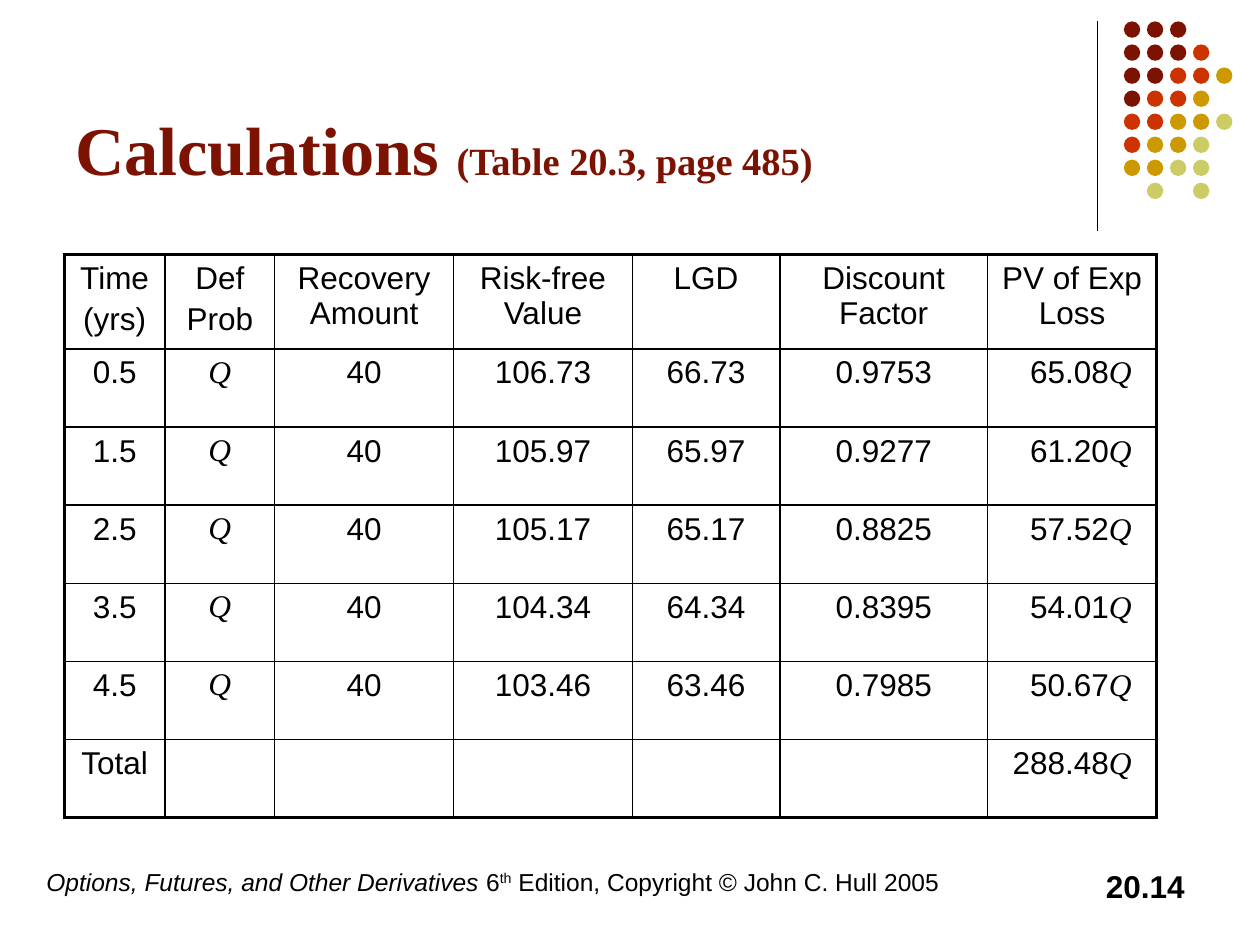
from dataclasses import dataclass

from lxml.etree import SubElement
from pptx import Presentation
from pptx.dml.color import RGBColor
from pptx.enum.shapes import MSO_CONNECTOR, MSO_SHAPE
from pptx.enum.text import MSO_ANCHOR, PP_ALIGN
from pptx.oxml import parse_xml
from pptx.oxml.ns import nsdecls, qn
from pptx.util import Inches, Pt


@dataclass(frozen=True)
class Theme:
    ink: str = "000000"
    maroon: str = "7C1302"
    red: str = "CC3300"
    gold: str = "CC9900"
    lime: str = "CCCC66"
    sans: str = "Arial"
    serif: str = "Times New Roman"
    title: float = 39
    subtitle: float = 22
    body: float = 18
    footer: float = 14
    outer_line: float = 2.25
    inner_line: float = 1
    rule_line: float = 0.75


T = Theme()

# A text is a list of paragraphs; a paragraph is a list of (words, format) runs.
TITLE = [[("Calculations ", {}), ("(Table 20.3, page 485)", {"size": T.subtitle})]]
FOOTER = [[
    ("Options, Futures, and Other Derivatives", {"italic": True}),
    (" 6", {}),
    ("th", {"raised": 30}),
    (" Edition, Copyright © John C. Hull 2005", {}),
]]
PAGE = [[("20.14", {})]]

HEADERS = [["Time", "(yrs)"], ["Def", "Prob"], ["Recovery Amount"], ["Risk-free Value"],
           ["LGD"], ["Discount Factor"], ["PV of Exp Loss"]]
RECOVERY = "40"
# time, risk-free value, loss given default, discount factor, PV of expected loss
DEFAULTS = [
    ("0.5", "106.73", "66.73", "0.9753", "65.08"),
    ("1.5", "105.97", "65.97", "0.9277", "61.20"),
    ("2.5", "105.17", "65.17", "0.8825", "57.52"),
    ("3.5", "104.34", "64.34", "0.8395", "54.01"),
    ("4.5", "103.46", "63.46", "0.7985", "50.67"),
]
TOTAL = "288.48"

DOTS = ["MMM", "MMMR", "MMRRG", "MRRG", "RRGGL", "RGGL", "GGLL", " L L"]
DOT_COLOURS = {"M": T.maroon, "R": T.red, "G": T.gold, "L": T.lime}
DOT_LEFT, DOT_TOP, DOT_SIZE = 8.92, 0.17, 0.13
DOT_PITCH = 1.28 / (len(DOTS) - 1)

TABLE_LEFT, TABLE_TOP = 0.51, 2.02
COLUMNS = [0.8, 0.87, 1.42, 1.42, 1.17, 1.65, 1.34]
ROWS = [0.69] + [0.62] * (len(DEFAULTS) + 1)
PV_INDENT = 0.14


def write(tf, paragraphs, align=PP_ALIGN.LEFT, gap=0, **base):
    for i, runs in enumerate(paragraphs):
        p = tf.paragraphs[0] if i == 0 else tf.add_paragraph()
        p.alignment = align
        if i:
            p.space_before = Pt(gap)
        for words, changes in runs:
            fmt = {"size": T.body, "name": T.sans, "colour": T.ink, **base, **changes}
            r = p.add_run()
            r.text = words
            r.font.size = Pt(fmt["size"])
            r.font.name = fmt["name"]
            r.font.color.rgb = RGBColor.from_string(fmt["colour"])
            r.font.bold = fmt.get("bold", False)
            r.font.italic = fmt.get("italic", False)
            if "raised" in fmt:
                r._r.get_or_add_rPr().set("baseline", str(fmt["raised"] * 1000))


def add_text(s, box, paragraphs, anchor=MSO_ANCHOR.TOP, **fmt):
    tf = s.shapes.add_textbox(*map(Inches, box)).text_frame
    tf.word_wrap = True
    tf.vertical_anchor = anchor
    write(tf, paragraphs, **fmt)


def add_decoration(s):
    rule = s.shapes.add_connector(MSO_CONNECTOR.STRAIGHT, *map(Inches, (8.71, 0.17, 8.71, 1.83)))
    rule.line.color.rgb = RGBColor.from_string(T.ink)
    rule.line.width = Pt(T.rule_line)
    SubElement(rule._element.spPr, qn("a:effectLst"))
    for row, letters in enumerate(DOTS):
        for col, letter in enumerate(letters):
            if letter not in DOT_COLOURS:
                continue
            sp = s.shapes.add_shape(
                MSO_SHAPE.OVAL,
                Inches(DOT_LEFT + col * DOT_PITCH), Inches(DOT_TOP + row * DOT_PITCH),
                Inches(DOT_SIZE), Inches(DOT_SIZE))
            sp.shadow.inherit = False
            sp.fill.solid()
            sp.fill.fore_color.rgb = RGBColor.from_string(DOT_COLOURS[letter])
            sp.line.fill.background()


def set_borders(cell, outer):
    """Draw all four sides, with the heavy line on the sides named in outer."""
    tc_pr = cell._tc.get_or_add_tcPr()
    for i, side in enumerate("LRTB"):
        width = Pt(T.outer_line if side in outer else T.inner_line)
        tc_pr.insert(i, parse_xml(
            f'<a:ln{side} {nsdecls("a")} w="{width}"><a:solidFill>'
            f'<a:srgbClr val="{T.ink}"/></a:solidFill></a:ln{side}>'))


def table_texts():
    q = ("Q", {"name": T.serif, "italic": True})
    plain = lambda words: [[(words, {})]]
    yield [[[(line, {})] for line in lines] for lines in HEADERS]
    for time, value, lgd, factor, pv in DEFAULTS:
        yield [plain(time), [[q]], *map(plain, (RECOVERY, value, lgd, factor)), [[(pv, {}), q]]]
    yield [plain("Total"), *[[]] * (len(COLUMNS) - 2), [[(TOTAL, {}), q]]]


def add_loss_table(s):
    last_row, last_col = len(ROWS) - 1, len(COLUMNS) - 1
    frame = s.shapes.add_table(
        len(ROWS), len(COLUMNS), Inches(TABLE_LEFT), Inches(TABLE_TOP),
        Inches(sum(COLUMNS)), Inches(sum(ROWS)))
    table = frame.table
    table.first_row = table.horz_banding = False
    for column, width in zip(table.columns, COLUMNS):
        column.width = Inches(width)
    for row, height in zip(table.rows, ROWS):
        row.height = Inches(height)
    for i, texts in enumerate(table_texts()):
        for j, paragraphs in enumerate(texts):
            cell = table.cell(i, j)
            cell.fill.background()
            edges = {"L": j == 0, "R": j == last_col, "T": i == 0, "B": i == last_row}
            set_borders(cell, [side for side, on in edges.items() if on])
            if j == last_col and 0 < i < last_row:
                cell.margin_left = Inches(0.1 + PV_INDENT)
            write(cell.text_frame, paragraphs, align=PP_ALIGN.CENTER, gap=T.body * 0.2)


def main():
    prs = Presentation()
    prs.slide_width, prs.slide_height = Inches(10), Inches(7.5)
    s = prs.slides.add_slide(prs.slide_layouts[6])
    add_decoration(s)
    add_text(s, (0.27, 6.83, 8.27, 0.5), FOOTER, size=T.footer)
    add_text(s, (7.17, 6.83, 2.33, 0.5), PAGE, align=PP_ALIGN.RIGHT, bold=True)
    add_text(s, (0.5, 0.13, 8.25, 1.42), TITLE, anchor=MSO_ANCHOR.BOTTOM,
             size=T.title, name=T.serif, colour=T.maroon, bold=True)
    add_loss_table(s)
    prs.save("out.pptx")


if __name__ == "__main__":
    main()
